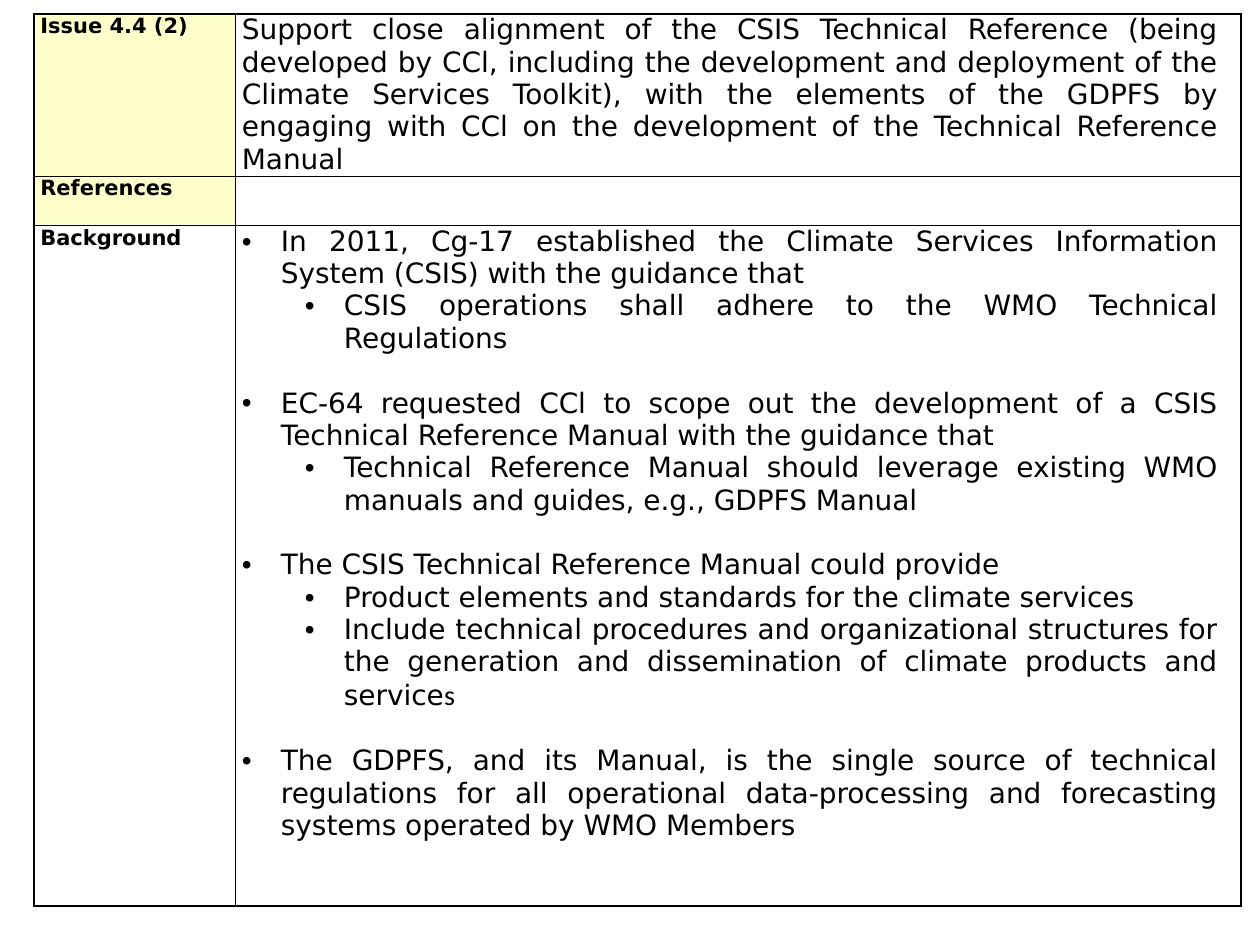
import pptx
import pptx.dml.color
import pptx.enum.text
import pptx.oxml
import pptx.oxml.ns
import pptx.util
from pptx.util import Inches

FONT = "DejaVu Sans"
LABEL = {"size": pptx.util.Pt(12), "bold": True, "name": FONT}
BODY = {"size": pptx.util.Pt(16), "bold": False, "name": FONT}
CELL = {"margin_left": Inches(0.05), "margin_right": Inches(0.05),
        "margin_top": 0, "margin_bottom": 0}
COLS = [1.6, 7.98]
ROWS = [1.29, 0.39, 5.4]

ISSUE = ("Support close alignment of the CSIS Technical Reference (being developed by CCl, "
         "including the development and deployment of the Climate Services Toolkit), with the "
         "elements of the GDPFS by engaging with CCl on the development of the Technical "
         "Reference Manual")
LABELS = [("Issue 4.4 (2)", "FFFFCC"), ("References", "FFFFCC"), ("Background", "FFFFFF")]

# Each group: a main point and its sub-points
BACKGROUND = [
    ("In 2011, Cg-17 established the Climate Services Information System (CSIS) with the "
     "guidance that",
     ["CSIS operations shall adhere to the WMO Technical Regulations"]),
    ("EC-64 requested CCl to scope out the development of a CSIS Technical Reference Manual "
     "with the guidance that",
     ["Technical Reference Manual should leverage existing WMO manuals and guides, e.g., "
      "GDPFS Manual"]),
    ("The CSIS Technical Reference Manual could provide",
     ["Product elements and standards for the climate services",
      "Include technical procedures and organizational structures for the generation and "
      "dissemination of climate products and services"]),
    ("The GDPFS, and its Manual, is the single source of technical regulations for all "
     "operational data-processing and forecasting systems operated by WMO Members", []),
]


def color(value):
    return pptx.dml.color.RGBColor.from_string(value)


def set_attrs(obj, values):
    for name, value in values.items():
        setattr(obj, name, value)


def add_run(p, text, style):
    r = p.add_run()
    r.text = text
    set_attrs(r.font, style)
    r.font.color.rgb = color("000000")
    return r


def justify(p):
    p.alignment = pptx.enum.text.PP_ALIGN.JUSTIFY
    p._p.get_or_add_pPr().set("marR", str(Inches(0.13)))


def add_bullet(p, text, level):
    justify(p)
    p.level = level
    pPr = p._p.get_or_add_pPr()
    pPr.set("marL", str(Inches(0.31 + 0.5 * level)))
    pPr.set("indent", str(Inches(-0.31)))
    ns = pptx.oxml.ns.nsdecls("a")
    for tag in ('buFont %s typeface="Arial"', 'buChar %s char="•"'):
        pPr.append(pptx.oxml.parse_xml(f"<a:{tag % ns}/>"))
    return add_run(p, text, BODY)


def format_cell(cell, fill=None):
    set_attrs(cell, CELL)
    tcPr = cell._tc.get_or_add_tcPr()
    ns = pptx.oxml.ns.nsdecls("a")
    for side in "LRTB":
        tcPr.append(pptx.oxml.parse_xml(
            f'<a:ln{side} {ns} w="12700"><a:solidFill><a:srgbClr val="000000"/>'
            f'</a:solidFill></a:ln{side}>'))
    if fill:
        cell.fill.solid()
        cell.fill.fore_color.rgb = color(fill)
    else:
        cell.fill.background()


def add_grid(s):
    table = s.shapes.add_table(len(ROWS), len(COLS), Inches(0.27), Inches(0.11),
                               Inches(sum(COLS)), Inches(sum(ROWS))).table
    set_attrs(table, {"first_row": False, "horz_banding": False})
    for column, width in zip(table.columns, COLS):
        column.width = Inches(width)
    for row, height in zip(table.rows, ROWS):
        row.height = Inches(height)
    return table


def fill_background(tf):
    p = tf.paragraphs[0]
    for i, (point, subpoints) in enumerate(BACKGROUND):
        if i:
            p = tf.add_paragraph()
            p.space_before = pptx.util.Pt(18.5)
        add_bullet(p, point, 0)
        for text in subpoints:
            p = tf.add_paragraph()
            r = add_bullet(p, text, 1)
            # The last letter of this point is set in another font
            if text.endswith("products and services"):
                r.text = text[:-1]
                add_run(p, text[-1], {**BODY, "name": "Calibri"})


def main():
    prs = pptx.Presentation()
    set_attrs(prs, {"slide_width": Inches(10), "slide_height": Inches(7.5)})
    s = prs.slides.add_slide(prs.slide_layouts[6])
    table = add_grid(s)

    # Label column
    for i, (text, fill) in enumerate(LABELS):
        format_cell(table.cell(i, 0), fill)
        add_run(table.cell(i, 0).text_frame.paragraphs[0], text, LABEL)

    # Content column
    for i, fill in enumerate([None, None, "FFFFFF"]):
        format_cell(table.cell(i, 1), fill)
    p = table.cell(0, 1).text_frame.paragraphs[0]
    justify(p)
    add_run(p, ISSUE, BODY)
    fill_background(table.cell(2, 1).text_frame)

    prs.save("out.pptx")


if __name__ == "__main__":
    main()
